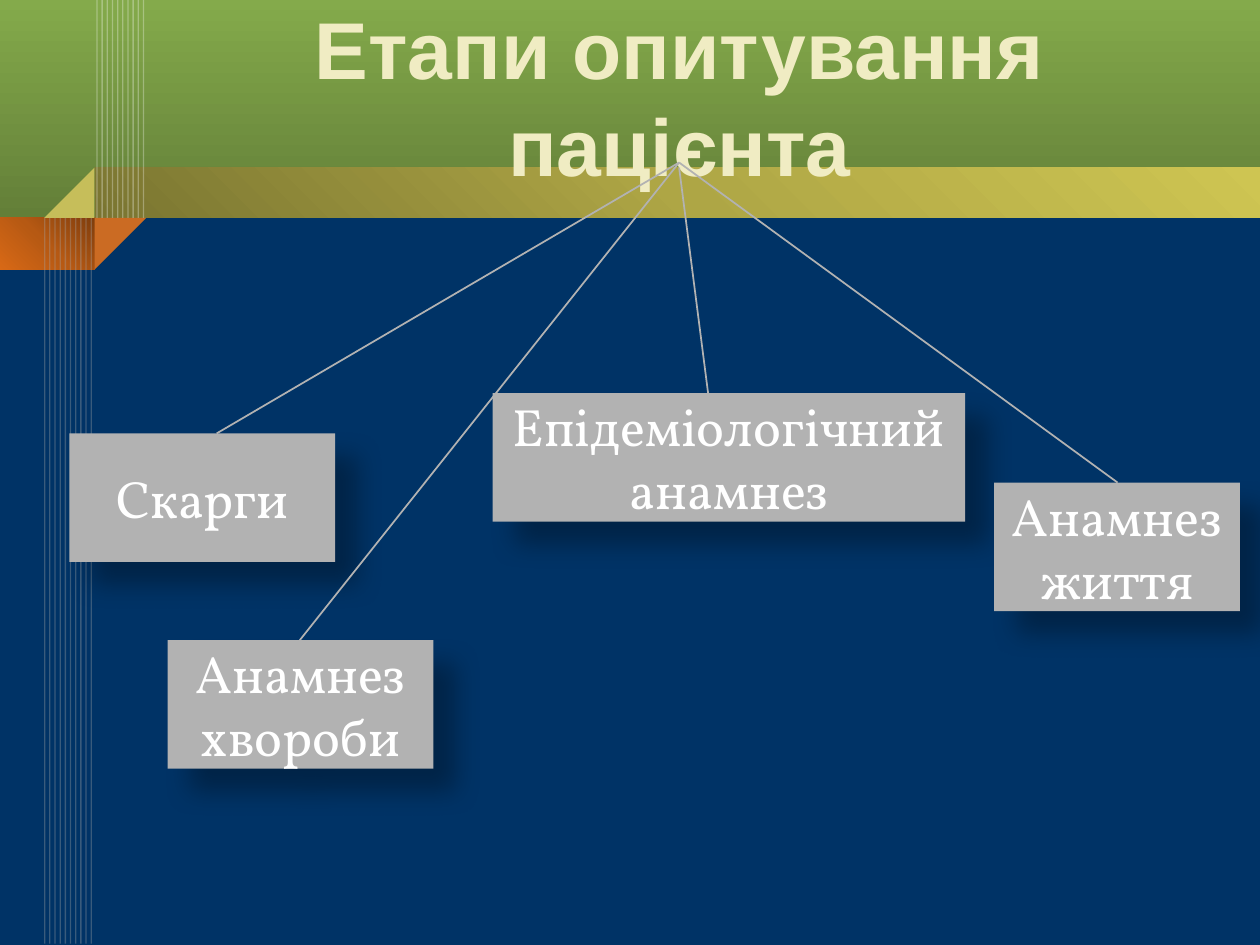
from typing import NamedTuple

from lxml import etree
from pptx import Presentation
from pptx.dml.color import RGBColor
from pptx.enum.shapes import MSO_CONNECTOR, MSO_SHAPE
from pptx.enum.text import MSO_ANCHOR, PP_ALIGN
from pptx.oxml import parse_xml
from pptx.oxml.ns import nsdecls, qn
from pptx.util import Inches, Pt

RECT, WEDGE = MSO_SHAPE.RECTANGLE, MSO_SHAPE.RIGHT_TRIANGLE
STRAIGHT = MSO_CONNECTOR.STRAIGHT
MIDDLE, CENTER = MSO_ANCHOR.MIDDLE, PP_ALIGN.CENTER

NAVY = RGBColor(0x00, 0x33, 0x66)
CREAM = RGBColor(0xF0, 0xEC, 0xC3)
GOLD = RGBColor(0xC6, 0xBE, 0x5A)
ORANGE = RGBColor(0xCB, 0x6B, 0x23)
GRAY = RGBColor(0xB2, 0xB2, 0xB2)
ASH = RGBColor(0xA6, 0xA6, 0xA6)
WHITE = RGBColor(0xFF, 0xFF, 0xFF)

GREENS = (RGBColor(0x84, 0xAA, 0x4B), RGBColor(0x63, 0x7F, 0x38))
GOLDS = (RGBColor(0x7A, 0x75, 0x31), RGBColor(0xAE, 0xA6, 0x45), RGBColor(0xCE, 0xC5, 0x52))
RUSTS = (RGBColor(0x80, 0x3E, 0x0D), RGBColor(0xB6, 0x59, 0x13), RGBColor(0xD8, 0x69, 0x16))

# The grid has 1000 columns and 750 rows
COLS, ROWS = 1000, 750
CELL = Inches(10) / COLS
BASE = 173  # row where the header ends
DOWN = '<a:lin ang="5400000" scaled="0"/>'
RISE = '<a:lin ang="18900000" scaled="0"/>'
CORNER = '<a:path path="circle"><a:fillToRect l="100000" b="100000"/></a:path>'


class Box(NamedTuple):
    col: float
    row: float
    wide: float
    high: float


class Stage(NamedTuple):
    text: str
    box: Box
    start: float  # row where the line leaves the title
    end: float  # column where the line meets the box


class Band(NamedTuple):
    box: Box
    tones: tuple[RGBColor, ...]
    flow: str


class Fold(NamedTuple):
    box: Box
    turn: int
    color: RGBColor


class Comb(NamedTuple):
    col: float
    top: float
    foot: float
    color: RGBColor
    alpha: int


TITLE = Box(120, 23, 838, 106)
HUB = TITLE.col + TITLE.wide / 2
BANDS = (
    Band(Box(0, 0, COLS, BASE), GREENS, DOWN),
    Band(Box(75, 133, COLS - 75, 40), GOLDS, RISE),
    Band(Box(0, BASE, 75, 41), RUSTS, CORNER),
)
FOLDS = (
    Fold(Box(75, BASE, 41, 41), 90, ORANGE),
    Fold(Box(35, 133, 40, 40), 270, GOLD),
)
COMBS = (Comb(77, 0, BASE, WHITE, 30), Comb(35.5, BASE, 749, ASH, 35))
TEETH, STEP = 10, 4.1
STAGES = (
    Stage("Скарги", Box(55, 344, 211, 102), 129, 172),
    Stage("Анамнез хвороби", Box(133, 508, 211, 102), 129, 238),
    Stage("Епідеміологічний анамнез", Box(391, 312, 375, 102), 133, 562),
    Stage("Анамнез життя", Box(789, 383, 195, 102), 129, 887),
)


def grid(*cells: float) -> list[int]:
    return [round(cell * CELL) for cell in cells]


def add_form(slide, kind, box: Box, color: RGBColor):
    form = slide.shapes.add_shape(kind, *grid(*box))
    form.shadow.inherit = False
    form.fill.solid()
    form.fill.fore_color.rgb = color
    form.line.fill.background()
    return form


def add_band(slide, band: Band) -> None:
    props = add_form(slide, RECT, band.box, band.tones[0])._element.spPr
    last = len(band.tones) - 1
    stops = "".join(
        f'<a:gs pos="{100000 * i // last}"><a:srgbClr val="{tone}"/></a:gs>'
        for i, tone in enumerate(band.tones)
    )
    blend = parse_xml(
        f'<a:gradFill {nsdecls("a")} rotWithShape="1">'
        f"<a:gsLst>{stops}</a:gsLst>{band.flow}</a:gradFill>"
    )
    props.replace(props.find(qn("a:solidFill")), blend)


def add_line(slide, ends: tuple, color: RGBColor, width: float, alpha: int = 100) -> None:
    line = slide.shapes.add_connector(STRAIGHT, *grid(*ends))
    line.line.color.rgb = color
    line.line.width = Pt(width)
    props = line._element.spPr
    if alpha < 100:
        tone = props.find(".//" + qn("a:srgbClr"))
        etree.SubElement(tone, qn("a:alpha"), val=str(alpha * 1000))
    etree.SubElement(props, qn("a:effectLst"))


def add_comb(slide, comb: Comb) -> None:
    for i in range(TEETH):
        col = comb.col + i * STEP
        add_line(slide, (col, comb.top, col, comb.foot), comb.color, 0.75, comb.alpha)


def write(shape, text: str, face: str, size: float, color: RGBColor, bold: bool) -> None:
    frame = shape.text_frame
    frame.text = text
    frame.word_wrap = True
    frame.vertical_anchor = MIDDLE
    para = frame.paragraphs[0]
    para.alignment = CENTER
    font = para.runs[0].font
    font.name, font.size, font.bold = face, Pt(size), bold
    font.color.rgb = color


def add_stage(slide, stage: Stage) -> None:
    form = add_form(slide, RECT, stage.box, GRAY)
    effect = form._element.spPr.find(qn("a:effectLst"))
    shade = etree.SubElement(
        effect, qn("a:outerShdw"), blurRad=str(Pt(15)), dist=str(Pt(18)),
        dir="2700000", algn="tl", rotWithShape="0",
    )
    tone = etree.SubElement(shade, qn("a:srgbClr"), val="000000")
    etree.SubElement(tone, qn("a:alpha"), val="30000")
    write(form, stage.text, "Vollkorn", 30, WHITE, False)


def main() -> None:
    deck = Presentation()
    deck.slide_width, deck.slide_height = grid(COLS, ROWS)
    slide = deck.slides.add_slide(deck.slide_layouts[6])
    slide.background.fill.solid()
    slide.background.fill.fore_color.rgb = NAVY

    # Header ribbon and stripes
    for band in BANDS:
        add_band(slide, band)
    for fold in FOLDS:
        add_form(slide, WEDGE, fold.box, fold.color).rotation = fold.turn
    for comb in COMBS:
        add_comb(slide, comb)

    # Title
    title = slide.shapes.add_textbox(*grid(*TITLE))
    write(title, "Етапи опитування пацієнта", "Arial", 46, CREAM, True)

    # Stages and the lines that lead to them
    for stage in STAGES:
        add_stage(slide, stage)
    for stage in STAGES:
        add_line(slide, (HUB, stage.start, stage.end, stage.box.row), GRAY, 1)

    deck.save("out.pptx")


if __name__ == "__main__":
    main()
